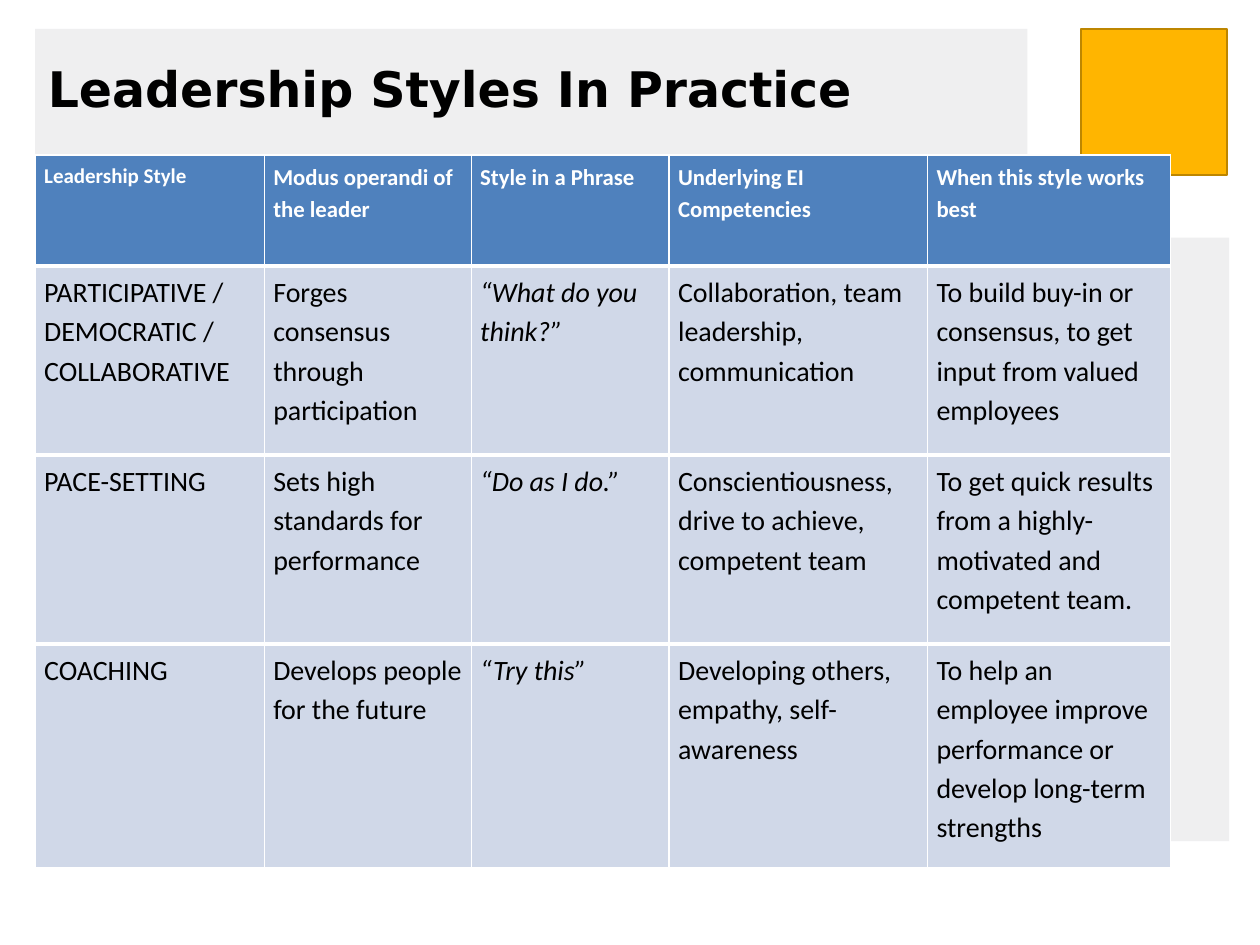
from lxml.etree import SubElement
from pptx import Presentation
from pptx.dml.color import RGBColor
from pptx.enum.shapes import MSO_SHAPE
from pptx.enum.text import MSO_ANCHOR, MSO_AUTO_SIZE, PP_ALIGN
from pptx.oxml import parse_xml
from pptx.oxml.ns import nsdecls, qn
from pptx.util import Cm, Pt

PALE_GREY = RGBColor(0xEF, 0xEF, 0xF0)
AMBER = RGBColor(0xFF, 0xB5, 0x00)
DARK_AMBER = RGBColor(0xBD, 0x86, 0x00)
HEADER_BLUE = RGBColor(0x4F, 0x81, 0xBD)
ROW_BLUE = RGBColor(0xD0, 0xD8, 0xE8)
WHITE = RGBColor(0xFF, 0xFF, 0xFF)
BLACK = RGBColor(0x00, 0x00, 0x00)

HEADINGS = [
    "Leadership Style",
    "Modus operandi of the leader",
    "Style in a Phrase",
    "Underlying EI Competencies",
    "When this style works best",
]
STYLES = [
    [
        "PARTICIPATIVE / DEMOCRATIC /\nCOLLABORATIVE",
        "Forges consensus through participation",
        "“What do you think?”",
        "Collaboration, team leadership, communication",
        "To build buy-in or consensus, to get input from valued employees",
    ],
    [
        "PACE-SETTING",
        "Sets high standards for performance",
        "“Do as I do.”",
        "Conscientiousness, drive to achieve, competent team",
        "To get quick results from a highly-motivated and competent team.",
    ],
    [
        "COACHING",
        "Develops people for the future",
        "“Try this”",
        "Developing others, empathy, self-awareness",
        "To help an employee improve performance or develop long-term strengths",
    ],
]
PHRASE_COLUMN = HEADINGS.index("Style in a Phrase")
COLUMN_WIDTHS = [4.62, 4.17, 3.99, 5.21, 4.9]
ROW_HEIGHTS = [2.24, 3.81, 3.81, 4.55]


def add_block(slide, left, top, width, height, fill, outline=None):
    """Add a flat rectangle, outlined only when a colour is given."""
    block = slide.shapes.add_shape(
        MSO_SHAPE.RECTANGLE, Cm(left), Cm(top), Cm(width), Cm(height)
    )
    block.shadow.inherit = False
    block.fill.solid()
    block.fill.fore_color.rgb = fill
    if outline is None:
        block.line.fill.background()
    else:
        block.line.color.rgb = outline
        block.line.width = Pt(1)


def add_side_decoration(slide, left, top):
    """Stack the amber square and the grey band down the right edge."""
    add_block(slide, left, top + 4.21, 2.99, 12.17, PALE_GREY)
    add_block(slide, left, top, 2.95, 2.95, AMBER, DARK_AMBER)


def fill_title(slide, left, top, width, height):
    """Place the title placeholder as a grey banner."""
    title = slide.shapes.title
    title.left, title.top = Cm(left), Cm(top)
    title.width, title.height = Cm(width), Cm(height)
    title.fill.solid()
    title.fill.fore_color.rgb = PALE_GREY
    frame = title.text_frame
    frame.text = "Leadership Styles In Practice"
    frame.auto_size = MSO_AUTO_SIZE.NONE
    frame.vertical_anchor = MSO_ANCHOR.MIDDLE
    heading = frame.paragraphs[0]
    heading.alignment = PP_ALIGN.LEFT
    heading.line_spacing = 0.9
    font = heading.runs[0].font
    font.name, font.size, font.bold = "DejaVu Sans", Pt(28), True
    font.color.rgb = BLACK


def set_borders(cell, top_width):
    """Give a cell thin white sides, a thick bottom and the given top."""
    properties = cell._tc.get_or_add_tcPr()
    widths = {"lnL": 1, "lnR": 1, "lnT": top_width, "lnB": 3}
    for position, (edge, width) in enumerate(widths.items()):
        border = parse_xml(f'<a:{edge} {nsdecls("a")} w="{Pt(width)}"/>')
        solid = SubElement(border, qn("a:solidFill"))
        SubElement(solid, qn("a:srgbClr"), val=str(WHITE))
        properties.insert(position, border)


def format_cell(cell, text, size, is_header, is_phrase):
    """Write one cell in the header or the body style."""
    cell.text_frame.text = text
    cell.margin_left = cell.margin_right = Cm(0.18)
    cell.margin_top = cell.margin_bottom = Cm(0.1)
    cell.fill.solid()
    cell.fill.fore_color.rgb = HEADER_BLUE if is_header else ROW_BLUE
    set_borders(cell, 1 if is_header else 3)
    for paragraph in cell.text_frame.paragraphs:
        paragraph.line_spacing = 1.15
        for run in paragraph.runs:
            run.font.name, run.font.size = "Calibri", Pt(size)
            run.font.bold = is_header
            run.font.italic = is_phrase and not is_header
            run.font.color.rgb = WHITE if is_header else BLACK


def add_styles_table(slide, left, top):
    """Add the table comparing the leadership styles."""
    rows = [HEADINGS] + STYLES
    table = slide.shapes.add_table(
        len(rows), len(HEADINGS), Cm(left), Cm(top),
        Cm(sum(COLUMN_WIDTHS)), Cm(sum(ROW_HEIGHTS)),
    ).table
    for column, width in zip(table.columns, COLUMN_WIDTHS):
        column.width = Cm(width)
    for row, height in zip(table.rows, ROW_HEIGHTS):
        row.height = Cm(height)
    for r, texts in enumerate(rows):
        for c, text in enumerate(texts):
            header_size = 12 if c == 0 else 13
            size = header_size if r == 0 else 16
            format_cell(table.cell(r, c), text, size, r == 0, c == PHRASE_COLUMN)


def main():
    """Build the slide and save it."""
    presentation = Presentation()
    presentation.slide_width, presentation.slide_height = Cm(25.4), Cm(19.05)
    slide = presentation.slides.add_slide(presentation.slide_layouts[5])
    add_side_decoration(slide, 21.79, 0.58)
    fill_title(slide, 0.71, 0.58, 20, 2.54)
    add_styles_table(slide, 0.71, 3.12)
    presentation.save("out.pptx")


if __name__ == "__main__":
    main()
